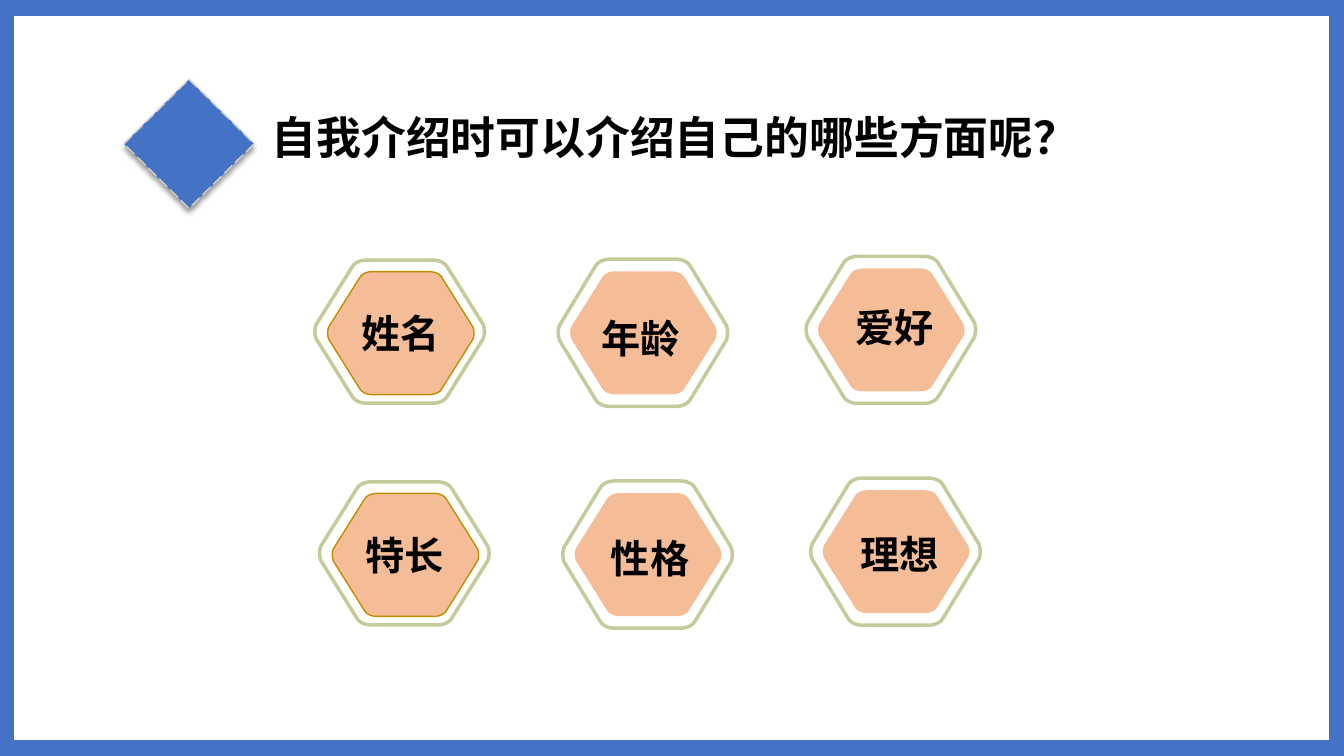
from dataclasses import dataclass

from lxml import etree
from pptx import Presentation
from pptx import util as u
from pptx.dml.color import RGBColor
from pptx.enum import dml, shapes, text
from pptx.oxml.ns import qn

CELL = u.Inches(0.1)
COLUMNS, ROWS = 133.33, 75


@dataclass(frozen=True)
class Theme:
    font: str = "Noto Sans CJK SC"
    blue: str = "4472C4"
    dash: str = "D0CECE"
    olive: str = "C3CB9B"
    orange: str = "ED7D31"
    gold: str = "BD8E00"
    ink: str = "000000"
    title_size: int = 32
    label_size: int = 28
    frame_width: float = 17.75
    ring_width: float = 2.5
    thin_width: float = 1


@dataclass(frozen=True)
class Box:
    column: float
    row: float
    columns: float
    rows: float

    def within(self, column, row, columns, rows):
        return Box(self.column + column, self.row + row, columns, rows)

    def point(self, x, y):
        return (round((self.column + x * self.columns) * CELL),
                round((self.row + y * self.rows) * CELL))

    def emu(self):
        return [round(length * CELL) for length in
                (self.column, self.row, self.columns, self.rows)]


THEME = Theme()
LEFT_CORNERS = (
    ((0.3, 1), (0.27, 1), (0.23, 0.98), (0.22, 0.95)),
    ((0.01, 0.55), (0, 0.52), (0, 0.48), (0.01, 0.45)),
    ((0.22, 0.05), (0.23, 0.02), (0.27, 0), (0.3, 0)),
)
RIGHT_CORNERS = tuple(tuple((1 - x, 1 - y) for x, y in corner) for corner in LEFT_CORNERS)
LOWER_ROW_SHIFT = (0.46, 22)
TOPIC_COLUMNS = (
    (Box(31.2, 25.8, 16.9, 14.2), (1.27, 1.15), THEME.gold,
     (("姓名", (1.3, 4.4)), ("特长", (1.25, 4.4)))),
    (Box(55.33, 25.72, 16.9, 14.6), (1.2, 1.2), None,
     (("年龄", (0.1, 5)), ("性格", (0.6, 4.8)))),
    (Box(79.93, 25.43, 16.9, 14.6), (1.2, 1.2), None,
     (("爱好", (0.75, 4.2)), ("理想", (0.72, 4.7)))),
)


def write_text(frame, words, size, color=THEME.ink, align=None, spacing=None, insets=None):
    frame.word_wrap = True
    frame.auto_size = text.MSO_AUTO_SIZE.SHAPE_TO_FIT_TEXT
    frame.vertical_anchor = text.MSO_ANCHOR.TOP
    if insets:
        (frame.margin_left, frame.margin_top,
         frame.margin_right, frame.margin_bottom) = map(u.Inches, insets)
    paragraph = frame.paragraphs[0]
    paragraph.alignment = align
    paragraph.line_spacing = spacing
    run = paragraph.add_run()
    run.text = words
    run.font.size = u.Pt(size)
    run.font.bold = True
    run.font.name = THEME.font
    run.font.color.rgb = RGBColor.from_string(color)
    east_asian = etree.SubElement(run.font._element, qn("a:ea"))
    east_asian.set("typeface", THEME.font)


def paint(shape, fill=None, opacity=None, line=None, width=THEME.thin_width):
    shape.shadow.inherit = False
    if fill:
        shape.fill.solid()
        shape.fill.fore_color.rgb = RGBColor.from_string(fill)
    else:
        shape.fill.background()
    if opacity:
        color = shape._element.spPr.find(qn("a:solidFill"))[0]
        etree.SubElement(color, qn("a:alpha")).set("val", str(opacity * 1000))
    if line:
        shape.line.color.rgb = RGBColor.from_string(line)
        shape.line.width = u.Pt(width)
    else:
        shape.line.fill.background()


def drop_shadow(shape, color, opacity, blur, distance, angle):
    effects = shape._element.spPr.find(qn("a:effectLst"))
    shadow = etree.SubElement(effects, qn("a:outerShdw"), blurRad=str(u.Pt(blur)),
                              dist=str(u.Pt(distance)), dir=str(angle * 60000),
                              algn="t", rotWithShape="0")
    shade = etree.SubElement(shadow, qn("a:srgbClr"), val=color)
    etree.SubElement(shade, qn("a:alpha"), val=str(opacity * 1000))


def round_corners(shape, corners):
    outline = shape._element.spPr.find(".//" + qn("a:path"))
    for segment in list(outline):
        outline.remove(segment)

    def add_segment(tag, points):
        segment = etree.SubElement(outline, qn(tag))
        for x, y in points:
            etree.SubElement(segment, qn("a:pt"), x=str(round(x * shape.width)),
                             y=str(round(y * shape.height)))

    for index, (start, *curve) in enumerate(corners):
        add_segment("a:lnTo" if index else "a:moveTo", [start])
        add_segment("a:cubicBezTo", curve)
    etree.SubElement(outline, qn("a:close"))


def add_hexagon(slide, box, **style):
    builder = slide.shapes.build_freeform(*box.point(0, 0))
    builder.add_line_segments([box.point(1, 0), box.point(1, 1), box.point(0, 1)], close=True)
    hexagon = builder.convert_to_shape()
    round_corners(hexagon, LEFT_CORNERS + RIGHT_CORNERS)
    paint(hexagon, **style)


def add_frame(slide, box):
    border = slide.shapes.add_shape(shapes.MSO_SHAPE.RECTANGLE, *box.emu())
    paint(border, line=THEME.blue, width=THEME.frame_width)


def add_heading(slide, box, words):
    marker = box.within(0, 0, 12.9, 12.8)
    diamond = slide.shapes.add_shape(shapes.MSO_SHAPE.DIAMOND, *marker.emu())
    paint(diamond, fill=THEME.blue, line=THEME.dash)
    diamond.line.dash_style = dml.MSO_LINE.LONG_DASH
    drop_shadow(diamond, THEME.ink, opacity=40, blur=4, distance=3, angle=90)
    title = slide.shapes.title
    title.left, title.top, title.width, title.height = box.within(13.55, 1.9, 84, 6.4).emu()
    write_text(title.text_frame, words, THEME.title_size, align=text.PP_ALIGN.LEFT,
               spacing=1.2, insets=(0.11, 0, 0.11, 0))


def add_topic(slide, box, words, inset, label_offset, edge):
    add_hexagon(slide, box, line=THEME.olive, width=THEME.ring_width)
    add_hexagon(slide, box.within(*inset, 14.6, 12.2),
                fill=THEME.orange, opacity=50, line=edge)
    label_width = 14.5 if edge else 16.2
    label = slide.shapes.add_textbox(*box.within(*label_offset, label_width, 5.7).emu())
    write_text(label.text_frame, words, THEME.label_size, align=text.PP_ALIGN.CENTER)


def add_topics(slide):
    shift_column, shift_row = LOWER_ROW_SHIFT
    for box, inset, edge, topics in TOPIC_COLUMNS:
        for index, (words, label_offset) in enumerate(topics):
            place = box.within(index * shift_column, index * shift_row, box.columns, box.rows)
            add_topic(slide, place, words, inset, label_offset, edge)


def main():
    presentation = Presentation()
    presentation.slide_width = round(COLUMNS * CELL)
    presentation.slide_height = ROWS * CELL
    slide = presentation.slides.add_slide(presentation.slide_layouts[5])
    add_frame(slide, Box(0.2, 0.33, COLUMNS - 0.4, ROWS - 0.7))
    add_heading(slide, Box(12.3, 7.87, 97.5, 12.8), "自我介绍时可以介绍自己的哪些方面呢？")
    add_topics(slide)
    presentation.save("out.pptx")


if __name__ == "__main__":
    main()
